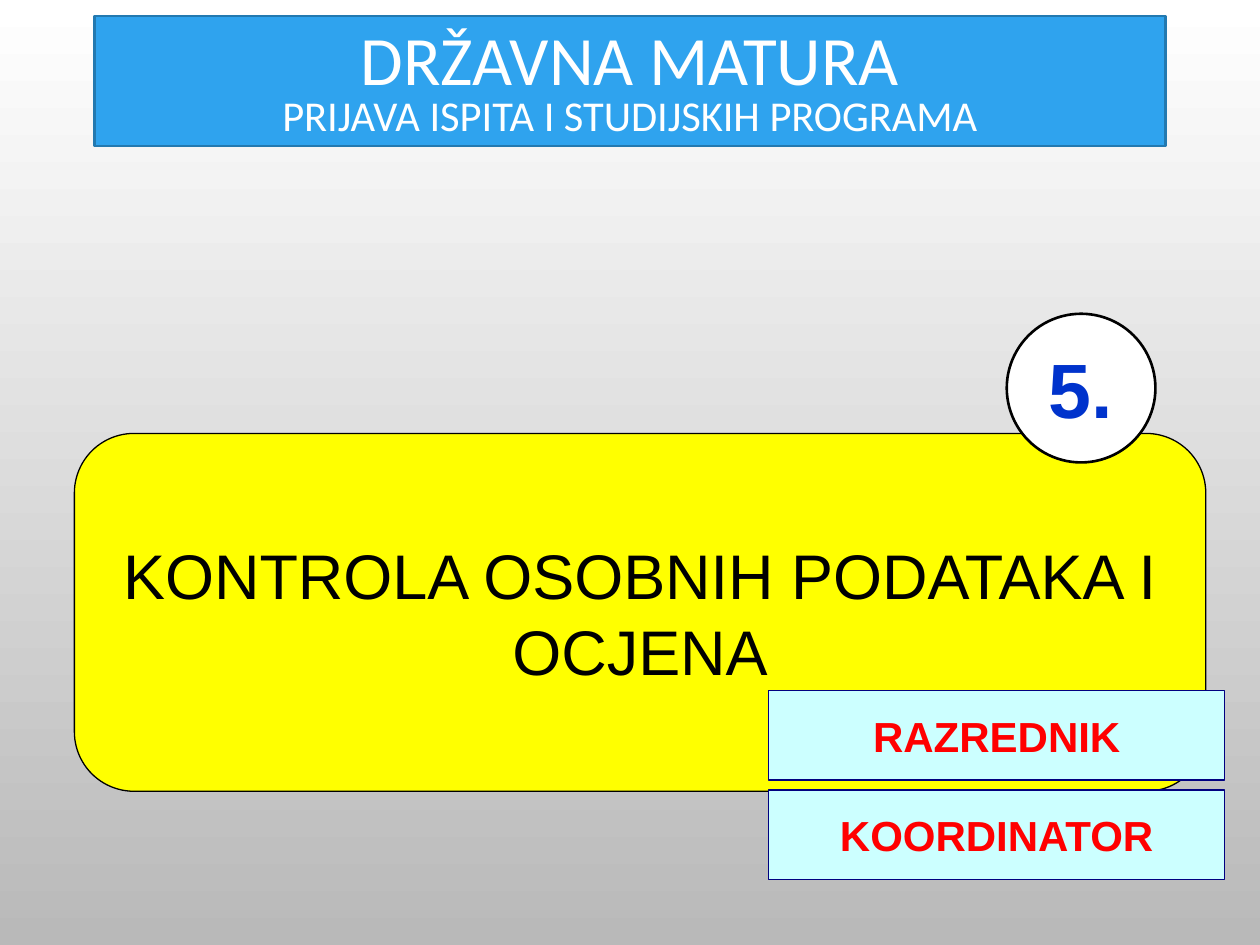
"""Build the slide on checking personal data and grades."""
import pptx
import pptx.util
import pptx.dml.color
import pptx.enum.shapes
import pptx.enum.text

Inches, Pt = pptx.util.Inches, pptx.util.Pt
Kind = pptx.enum.shapes.MSO_SHAPE
Anchor = pptx.enum.text.MSO_ANCHOR
Align = pptx.enum.text.PP_ALIGN


def color(code):
    """Turn a hex string into a colour."""
    return pptx.dml.color.RGBColor.from_string(code)


def paint(shape, fill, edge, width):
    """Fill and outline a shape."""
    shape.fill.solid()
    shape.fill.fore_color.rgb = color(fill)
    shape.line.color.rgb = color(edge)
    shape.line.width = Pt(width)


deck = pptx.Presentation()
deck.slide_width, deck.slide_height = Inches(10), Inches(7.5)
slide = deck.slides.add_slide(deck.slide_layouts[5])

back = slide.background.fill
back.gradient()
back.gradient_angle = 270
for stop, place, code in zip(back.gradient_stops, (0, 1), ("FFFFFF", "B9B9B9")):
    stop.position = place
    stop.color.rgb = color(code)

title = slide.shapes.title
title.left, title.top = Inches(0.75), Inches(0.13)
title.width, title.height = Inches(8.5), Inches(1.03)
paint(title, "2FA3EE", "2379B0", 1.25)
frame = title.text_frame
frame.auto_size = pptx.enum.text.MSO_AUTO_SIZE.NONE
frame.vertical_anchor = Anchor.BOTTOM
head = frame.paragraphs[0]
head.alignment = Align.CENTER
head.line_spacing = 0.8
head.font.name = "Calibri"
head.font.color.rgb = color("FFFFFF")
run = head.add_run()
run.text = "DRŽAVNA MATURA"
run.font.size = Pt(39.6)
head.add_line_break()
run = head.add_run()
run.text = "PRIJAVA ISPITA I STUDIJSKIH PROGRAMA"
run.font.size = Pt(24.3)

parts = [
    (Kind.ROUNDED_RECTANGLE, (0.59, 3.44, 8.98, 2.84), "FFFF00", "000000", 0.75,
     "KONTROLA OSOBNIH PODATAKA I OCJENA", 36, "000000", False),
    (Kind.OVAL, (7.99, 2.49, 1.18, 1.18), "FFFFFF", "000000", 1.5,
     "5.", 44, "0033CC", True),
]
for row, role in enumerate(("RAZREDNIK", "KOORDINATOR")):
    parts.append((Kind.RECTANGLE, (6.1, 5.48 + 0.79 * row, 3.62, 0.71),
                  "CCFFFF", "000080", 0.75, role, 24, "FF0000", True))

for kind, box, fill, edge, width, text, size, ink, bold in parts:
    shape = slide.shapes.add_shape(kind, *map(Inches, box))
    shape.shadow.inherit = False
    paint(shape, fill, edge, width)
    frame = shape.text_frame
    frame.word_wrap = not bold
    frame.vertical_anchor = Anchor.MIDDLE
    line = frame.paragraphs[0]
    line.text = text
    line.alignment = Align.CENTER
    line.font.name = "Arial"
    line.font.size = Pt(size)
    line.font.bold = bold
    line.font.color.rgb = color(ink)

deck.save("out.pptx")
